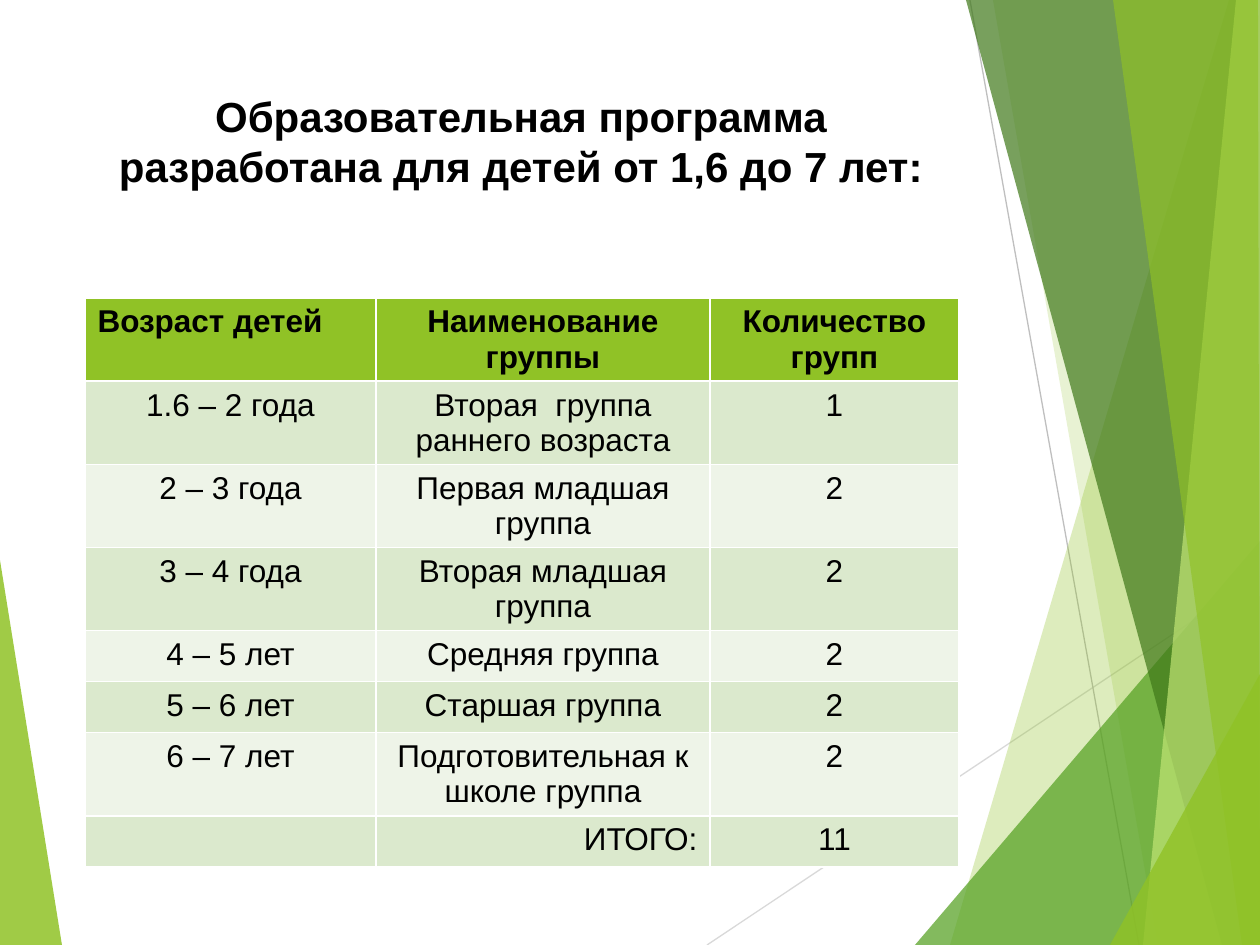
"""Build a slide with a table of kindergarten age groups."""
from dataclasses import dataclass

from lxml import etree
from pptx import Presentation
from pptx.dml.color import RGBColor
from pptx.enum.shapes import MSO_CONNECTOR
from pptx.enum.text import MSO_ANCHOR, MSO_AUTO_SIZE, PP_ALIGN
from pptx.oxml.ns import qn
from pptx.util import Pt

LEFT, MID, RIGHT = PP_ALIGN.LEFT, PP_ALIGN.CENTER, PP_ALIGN.RIGHT
PX = 914400 / 126
WIDE, HIGH = 1260, 945


@dataclass(frozen=True)
class Theme:
    font: str = "Arial"
    ink: str = "000000"
    lime: str = "90C226"
    leaf: str = "54A021"
    pine: str = "3F7819"
    pale: str = "C0E474"
    bands: tuple = ("DBE9CD", "EEF4E8")
    head: int = 24
    body: int = 18


THEME = Theme()
TITLE = "Образовательная программа разработана для детей от 1,6 до 7 лет:"
TITLE_BOX = (84, 84, 874, 181)
ROWS = [
    ("Возраст детей", "Наименование группы", "Количество групп"),
    ("1.6 – 2 года", "Вторая  группа раннего возраста", "1"),
    ("2 – 3 года", "Первая младшая группа", "2"),
    ("3 – 4 года", "Вторая младшая группа", "2"),
    ("4 – 5 лет", "Средняя группа", "2"),
    ("5 – 6 лет", "Старшая группа", "2"),
    ("6 – 7 лет", "Подготовительная к школе группа", "2"),
    ("", "ИТОГО:", "11"),
]
COLS = (291, 334, 249)
ROW_HIGH = 51
TABLE_AT = (85, 298)
ALIGNS = {(0, 0): LEFT, (len(ROWS) - 1, 1): RIGHT}
LINES = [
    ((707, HIGH), (WIDE, 576), "D9D9D9"),
    ((970, 0), (1139, HIGH), "BFBFBF"),
]
WEDGE = (THEME.lime, 85, [(0, 560), (62, HIGH), (0, HIGH)])
FACETS = [
    (THEME.lime, 30, [(1229, 0), (950, HIGH), (WIDE, HIGH), (WIDE, 0)]),
    (THEME.lime, 20, [(993, 0), (1158, HIGH), (WIDE, HIGH), (WIDE, 0)]),
    (THEME.leaf, 72, [(915, HIGH), (WIDE, 541), (WIDE, HIGH)]),
    (THEME.pine, 70, [(966, 0), (1222, HIGH), (WIDE, HIGH), (WIDE, 0)]),
    (THEME.pale, 70, [(1236, 0), (1143, HIGH), (WIDE, HIGH), (WIDE, 0)]),
    (THEME.lime, 65, [(1113, 0), (1242, HIGH), (WIDE, HIGH), (1258, 0)]),
    (THEME.lime, 80, [(1110, HIGH), (WIDE, 674), (WIDE, HIGH)]),
]


def px(*nums):
    return [round(n * PX) for n in nums]


def paint(fill, tone):
    fill.solid()
    fill.fore_color.rgb = RGBColor.from_string(tone)


def style(para, size, bold, align):
    para.alignment = align
    font = para.font
    font.name, font.size, font.bold = THEME.font, Pt(size), bold
    font.color.rgb = RGBColor.from_string(THEME.ink)


def facet(shapes, tone, alpha, points):
    pen = shapes.build_freeform(*points[0], scale=PX)
    pen.add_line_segments(points[1:], close=True)
    shape = pen.convert_to_shape()
    shape.shadow.inherit = False
    shape.line.fill.background()
    paint(shape.fill, tone)
    clr = shape._element.spPr.find(qn("a:solidFill"))[0]
    etree.SubElement(clr, qn("a:alpha"), val=str(alpha * 1000))


def thread(shapes, start, end, tone):
    line = shapes.add_connector(MSO_CONNECTOR.STRAIGHT, *px(*start, *end))
    line.line.width = Pt(0.75)
    paint(line.line.fill, tone)
    etree.SubElement(line._element.spPr, qn("a:effectLst"))


def headline(shapes):
    title = shapes.title
    title.left, title.top, title.width, title.height = px(*TITLE_BOX)
    frame = title.text_frame
    frame.text = TITLE
    frame.word_wrap = True
    frame.auto_size = MSO_AUTO_SIZE.NONE
    frame.vertical_anchor = MSO_ANCHOR.TOP
    style(frame.paragraphs[0], THEME.head, True, MID)
    shapes._spTree.append(title._element)


def groups(shapes):
    size = (sum(COLS), ROW_HIGH * len(ROWS))
    table = shapes.add_table(len(ROWS), len(COLS), *px(*TABLE_AT, *size)).table
    for col, wide in zip(table.columns, COLS):
        col.width = px(wide)[0]
    for r, row in enumerate(ROWS):
        table.rows[r].height = px(ROW_HIGH)[0]
        tone = THEME.bands[(r - 1) % 2] if r else THEME.lime
        for c, text in enumerate(row):
            cell = table.cell(r, c)
            cell.text = text
            paint(cell.fill, tone)
            style(cell.text_frame.paragraphs[0], THEME.body, r == 0,
                  ALIGNS.get((r, c), MID))


def main():
    deck = Presentation()
    deck.slide_width, deck.slide_height = px(WIDE, HIGH)
    shapes = deck.slides.add_slide(deck.slide_layouts[5]).shapes
    facet(shapes, *WEDGE)
    for line in LINES:
        thread(shapes, *line)
    for item in FACETS:
        facet(shapes, *item)
    headline(shapes)
    groups(shapes)
    deck.save("out.pptx")


if __name__ == "__main__":
    main()
